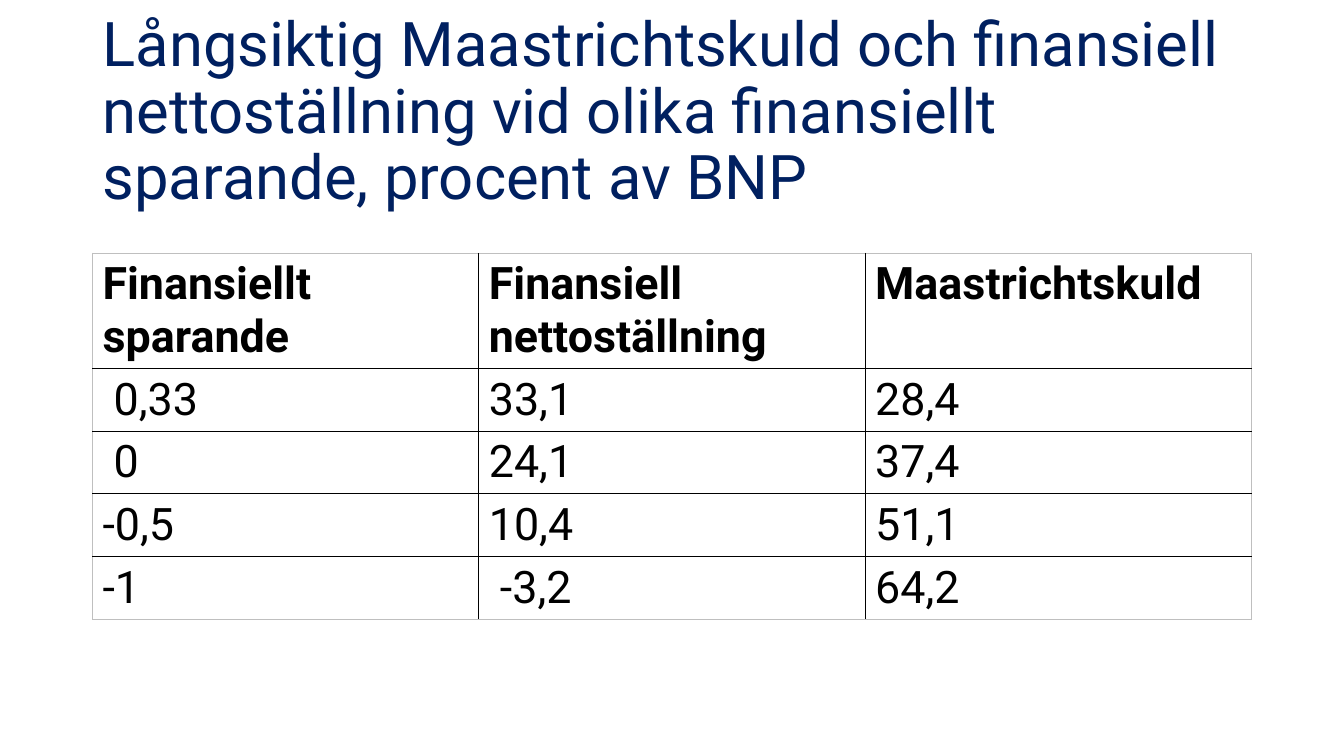
from lxml.etree import SubElement
from pptx import Presentation
from pptx.dml.color import RGBColor as RGB
from pptx.enum.text import MSO_ANCHOR as Anchor, MSO_AUTO_SIZE as Fit, PP_ALIGN as Align
from pptx.oxml.ns import qn
from pptx.util import Cm, Pt

COLORS = {"title": "002060", "text": "000000", "rule": "000000", "frame": "BFBFBF"}
ROWS = [
    ["Finansiellt sparande", "Finansiell nettoställning", "Maastrichtskuld"],
    [" 0,33", "33,1", "28,4"],
    [" 0", "24,1", "37,4"],
    ["-0,5", "10,4", "51,1"],
    ["-1", " -3,2", "64,2"],
]
LEFT, WIDTH = Cm(2.33), Cm(29.21)


def style(para, size, color, bold=False):
    look = {"name": "Roboto", "size": Pt(size), "bold": bold}
    for key, value in look.items():
        setattr(para.font, key, value)
    para.font.color.rgb = RGB.from_string(COLORS[color])
    para.alignment = Align.LEFT


def border(cell, side, color, width):
    line = SubElement(cell._tc.get_or_add_tcPr(), qn(f"a:ln{side}"), w=str(Pt(width)))
    fill = SubElement(line, qn("a:solidFill"))
    SubElement(fill, qn("a:srgbClr"), val=COLORS[color])


deck = Presentation()
deck.slide_width, deck.slide_height = Cm(33.87), Cm(19.05)
slide = deck.slides.add_slide(deck.slide_layouts[5])

# Title
title = slide.shapes.title
place = {"left": LEFT, "top": Cm(1.01), "width": WIDTH, "height": Cm(3.68)}
for key, value in place.items():
    setattr(title, key, value)
frame = title.text_frame
frame.text = ("Långsiktig Maastrichtskuld och finansiell nettoställning "
              "vid olika finansiellt sparande, procent av BNP")
frame.word_wrap = True
frame.auto_size = Fit.NONE
frame.vertical_anchor = Anchor.MIDDLE
frame.paragraphs[0].line_spacing = 0.9
style(frame.paragraphs[0], 44, "title")

# Table
count, span = len(ROWS), len(ROWS[0])
heights = [Cm(2.9)] + [Cm(1.56)] * (count - 1)
table = slide.shapes.add_table(count, span, LEFT, Cm(6.38), WIDTH, sum(heights)).table
table.first_row = table.horz_banding = False
for col in table.columns:
    col.width = WIDTH // span

# Cells: black inner rules, a heavier one below the header, pale outer frame
for r, texts in enumerate(ROWS):
    table.rows[r].height = heights[r]
    for c, text in enumerate(texts):
        cell = table.cell(r, c)
        cell.text = text
        style(cell.text_frame.paragraphs[0], 32, "text", bold=r == 0)
        outer = {"L": c == 0, "R": c == span - 1, "T": r == 0, "B": r == count - 1}
        for side, edge in outer.items():
            head = (r, side) in [(0, "B"), (1, "T")]
            border(cell, side, "frame" if edge else "rule",
                   0.5 if edge else 1.5 if head else 1)
        cell.fill.background()

deck.save("out.pptx")
